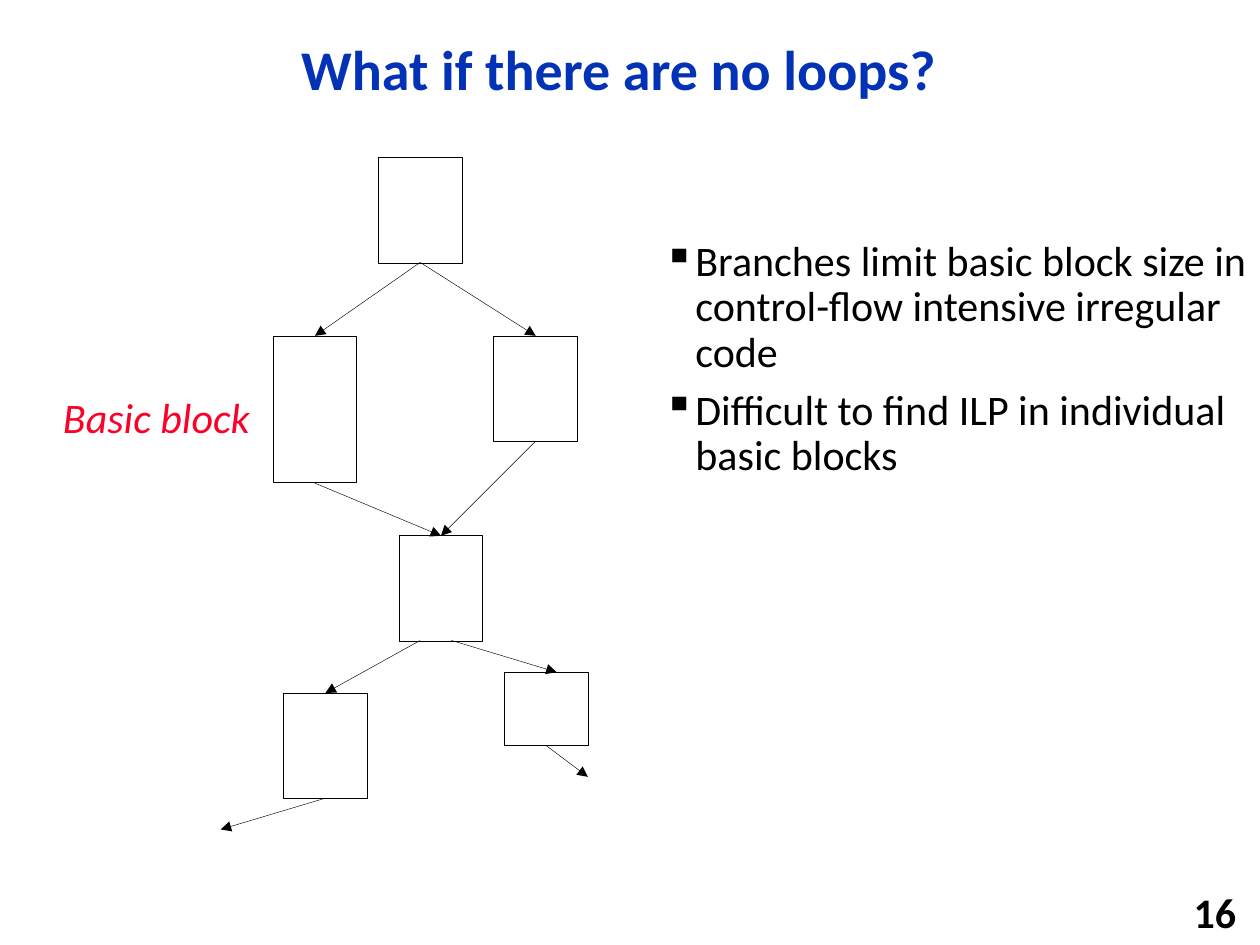
from lxml.etree import SubElement
from pptx import Presentation
from pptx.dml.color import RGBColor
from pptx.enum.shapes import MSO_CONNECTOR, MSO_SHAPE
from pptx.enum.text import MSO_ANCHOR, PP_ALIGN
from pptx.oxml.ns import qn
from pptx.util import Cm, Pt

BLUE = RGBColor(0x03, 0x32, 0xB7)
RED = RGBColor(0xFC, 0x01, 0x28)
BLACK = RGBColor(0, 0, 0)

BLOCK_W = 1.69
# Basic blocks: left, top, height in cm
BLOCKS = [
    (5.50, 6.77, 2.96),
    (9.95, 6.77, 2.12),
    (7.62, 3.18, 2.12),
    (8.04, 10.80, 2.12),
    (5.72, 13.97, 2.12),
    (10.16, 13.55, 1.48),
]
# Control-flow edges: start x, y and end x, y in cm
EDGES = [
    (8.47, 5.29, 6.35, 6.77),
    (8.47, 5.29, 10.80, 6.77),
    (6.35, 9.74, 8.89, 10.80),
    (10.80, 8.89, 8.89, 10.80),
    (8.47, 12.91, 6.56, 13.97),
    (9.10, 12.91, 11.22, 13.55),
    (11.01, 15.03, 11.85, 15.66),
    (6.56, 16.09, 4.45, 16.72),
]


class FlowSlide:
    """Style and current slide, with one method per kind of element."""

    font = "Calibri"
    line_width = Pt(0.25)

    def __init__(self, prs):
        self.s = prs.slides.add_slide(prs.slide_layouts[6])

    def text(self, lines, x, y, w, h, size=24, color=BLACK, bold=False, italic=False,
             align=PP_ALIGN.LEFT, wrap=True, spacing=None):
        tf = self.s.shapes.add_textbox(Cm(x), Cm(y), Cm(w), Cm(h)).text_frame
        tf.word_wrap = wrap
        tf.vertical_anchor = MSO_ANCHOR.MIDDLE
        tf.text = "\n".join(lines)
        for p in tf.paragraphs:
            p.alignment = align
            p.line_spacing = spacing
            p.font.name = self.font
            p.font.size = Pt(size)
            p.font.bold = bold
            p.font.italic = italic
            p.font.color.rgb = color
        return tf

    def bullets(self, lines, x, y, w, h):
        tf = self.text(lines, x, y, w, h, spacing=0.9)
        for p in tf.paragraphs:
            p.space_before = Pt(7.2)
            pPr = p._p.get_or_add_pPr()
            pPr.set("marL", str(Cm(0.64)))
            pPr.set("indent", str(-Cm(0.64)))
            bullet = pPr.makeelement(qn("a:buChar"), {"char": "▪"})
            pPr.find(qn("a:defRPr")).addprevious(bullet)

    def block(self, x, y, h):
        sp = self.s.shapes.add_shape(MSO_SHAPE.RECTANGLE, Cm(x), Cm(y), Cm(BLOCK_W), Cm(h))
        sp.shadow.inherit = False
        sp.fill.background()
        sp.line.color.rgb = BLACK
        sp.line.width = self.line_width

    def arrow(self, x1, y1, x2, y2):
        c = self.s.shapes.add_connector(MSO_CONNECTOR.STRAIGHT, Cm(x1), Cm(y1), Cm(x2), Cm(y2))
        c.line.color.rgb = BLACK
        c.line.width = self.line_width
        SubElement(c.line._get_or_add_ln(), qn("a:tailEnd"), type="triangle")
        SubElement(c._element.spPr, qn("a:effectLst"))


def main():
    prs = Presentation()
    prs.slide_width, prs.slide_height = Cm(25.4), Cm(19.05)
    slide = FlowSlide(prs)

    # Title and slide number
    slide.text(["What if there are no loops?"], 2.34, 0.43, 20.27, 2.06, size=32,
               color=BLUE, bold=True, align=PP_ALIGN.CENTER, spacing=0.9)
    slide.text(["16"], 19.89, 17.98, 5.28, 0.81, bold=True, align=PP_ALIGN.RIGHT)

    # Remarks
    slide.bullets([
        "Branches limit basic block size in control-flow intensive irregular code",
        "Difficult to find ILP in individual basic blocks",
    ], 13.13, 4.65, 12.27, 5.21)

    # Control-flow graph
    for block in BLOCKS:
        slide.block(*block)
    for edge in EDGES:
        slide.arrow(*edge)
    slide.text(["Basic block"], 1.02, 7.75, 4.52, 1.3, color=RED, italic=True, wrap=False)

    prs.save("out.pptx")


if __name__ == "__main__":
    main()
